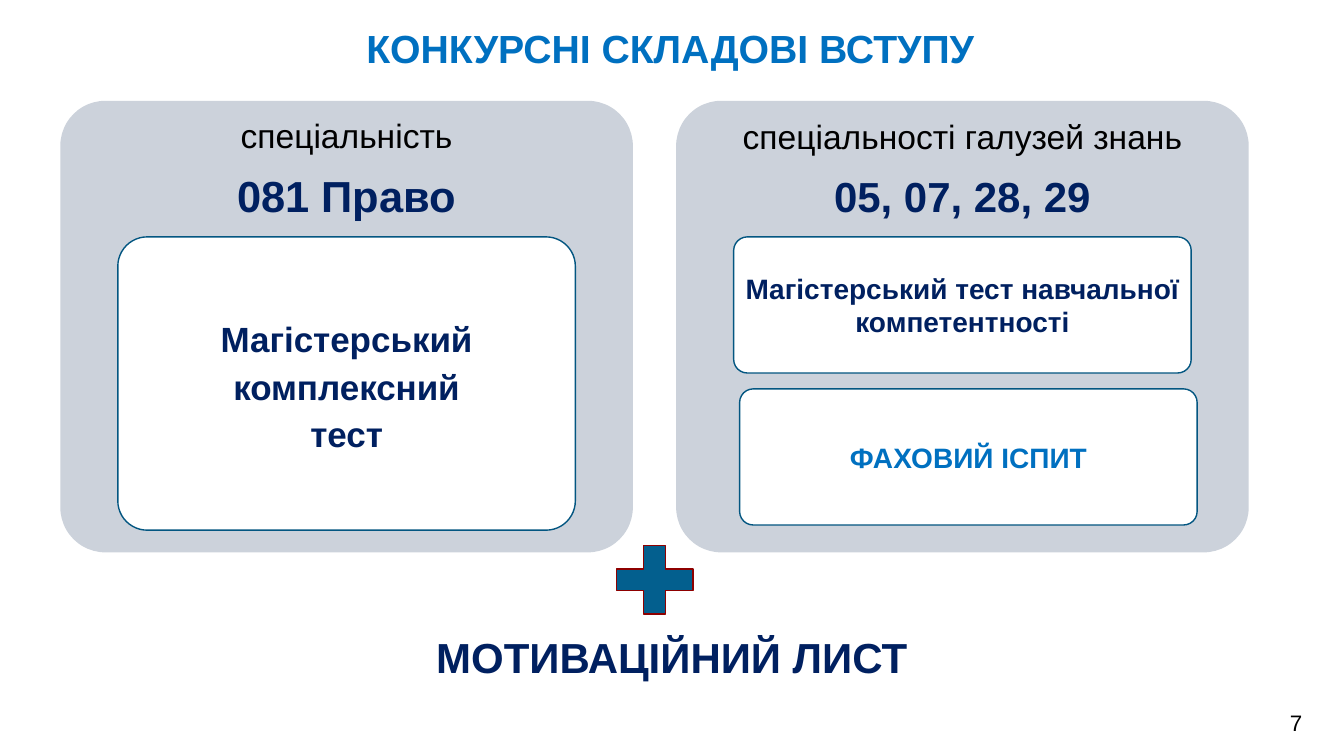
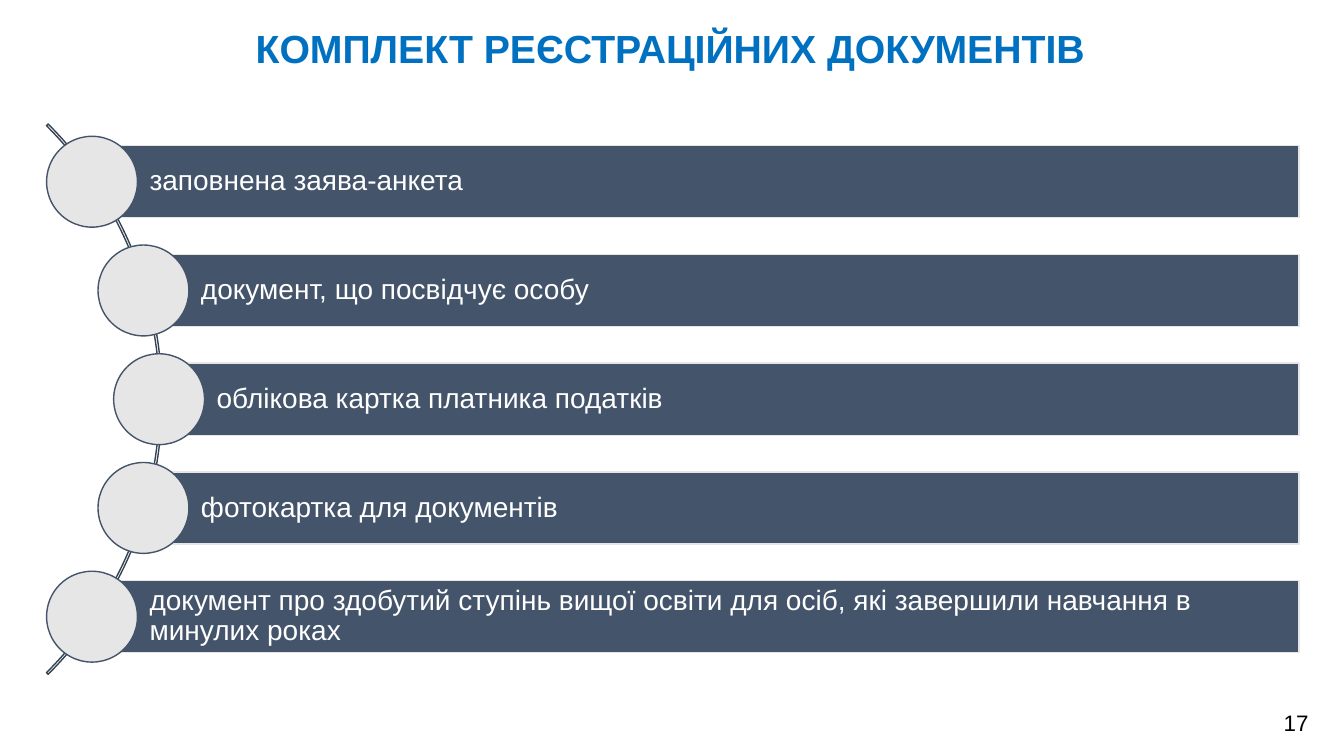
from math import sqrt
from pptx import Presentation
from pptx.dml.color import RGBColor
from pptx.enum.shapes import MSO_SHAPE
from pptx.enum.text import MSO_ANCHOR, PP_ALIGN
from pptx.util import Cm, Pt

WIDTH, HEIGHT = 33.87, 19.05
FONT = "Arial"
COLORS = {
    "black": "000000", "white": "FFFFFF", "title": "0070C0", "navy": "002060",
    "panel": "CCD2DB", "frame": "035681", "plus": "035F8E", "plus_line": "8E0000",
    "bar": "44546A", "pale": "E7E6E6", "arc": "364355",
}


def color(name):
    return RGBColor.from_string(COLORS[name])


class Deck:
    """Holds the shared style and the current slide."""

    def __init__(self):
        self.prs = Presentation()
        self.prs.slide_width, self.prs.slide_height = Cm(WIDTH), Cm(HEIGHT)
        self.s = None

    def slide(self, title, number):
        self.s = self.prs.slides.add_slide(self.prs.slide_layouts[6])
        self.text((0.48, 0.61, 32.82, 2.67), [(title, 28, "title", True)],
                  anchor=MSO_ANCHOR.TOP, spacing=0.9)
        self.text((31.85, 17.75, 1.63, 0.93), [(number, 16, "black", False)])

    def shape(self, kind, box, fill=None, line=None, adjust=()):
        sp = self.s.shapes.add_shape(kind, *map(Cm, box))
        sp.shadow.inherit = False
        for i, value in enumerate(adjust):
            sp.adjustments[i] = value
        if fill:
            sp.fill.solid()
            sp.fill.fore_color.rgb = color(fill)
        else:
            sp.fill.background()
        if line:
            sp.line.color.rgb = color(line)
            sp.line.width = Pt(1)
        else:
            sp.line.fill.background()
        return sp

    def rounded(self, box, fill, line=None):
        return self.shape(MSO_SHAPE.ROUNDED_RECTANGLE, box, fill, line, [0.1])

    def text(self, box, lines, **style):
        sp = self.s.shapes.add_textbox(*map(Cm, box))
        self.set_text(sp, lines, **style)

    def set_text(self, sp, lines, insets=(0.25, 0.13, 0.25, 0.13), align=PP_ALIGN.CENTER,
                 anchor=MSO_ANCHOR.MIDDLE, spacing=1.0, gap=0):
        """Fill a shape with (text, size, color, bold) paragraphs."""
        tf = sp.text_frame
        tf.word_wrap = True
        tf.vertical_anchor = anchor
        tf.margin_left, tf.margin_top, tf.margin_right, tf.margin_bottom = map(Cm, insets)
        tf.text = "\n".join(line[0] for line in lines)
        for p, (_, size, ink, bold) in zip(tf.paragraphs, lines):
            p.alignment = align
            p.line_spacing = spacing
            p.space_after = Pt(gap)
            for r in p.runs:
                r.font.name, r.font.size, r.font.bold = FONT, Pt(size), bold
                r.font.color.rgb = color(ink)

    def panel(self, left, caption, codes, size):
        self.rounded((left, 2.54, 14.43, 11.38), "panel")
        self.text((left, 2.54, 14.43, 3.4),
                  [(caption, 24, "black", False), (codes, size, "navy", True)], gap=10)

    def card(self, left, top, height, lines, spacing=1.0):
        sp = self.rounded((left, top, 11.53, height), "white", "frame")
        self.set_text(sp, lines, insets=(0.15, 0.1, 0.15, 0.1), spacing=spacing)

    def bar(self, x, y, label):
        """A labelled bar that starts at the centre (x, y) of its circle."""
        height, diameter, right = 1.82, 2.29, 32.74
        sp = self.shape(MSO_SHAPE.RECTANGLE, (x, y - height / 2, right - x, height),
                        "bar", "pale")
        self.set_text(sp, [(label, 20, "white", False)], insets=(1.45, 0.15, 0.15, 0.15),
                      align=PP_ALIGN.LEFT, spacing=0.9)
        self.shape(MSO_SHAPE.OVAL,
                   (x - diameter / 2, y - diameter / 2, diameter, diameter), "pale", "bar")


def admission(deck):
    deck.slide("КОНКУРСНІ СКЛАДОВІ ВСТУПУ", "7")
    # Left panel
    deck.panel(1.52, "спеціальність", "081 Право", 31)
    words = ("Магістерський", "комплексний", "тест")
    deck.card(2.97, 5.97, 7.39, [(word, 25, "navy", True) for word in words], 1.13)
    # Right panel
    deck.panel(17.04, "спеціальності галузей знань", "05, 07, 28, 29", 30)
    deck.card(18.49, 5.97, 3.43,
              [("Магістерський тест навчальної компетентності", 20, "navy", True)])
    deck.card(18.64, 9.8, 3.43, [("ФАХОВИЙ ІСПИТ", 20, "title", True)])
    # Common requirement
    deck.shape(MSO_SHAPE.MATH_PLUS, (15.19, 13.44, 2.62, 2.34), "plus", "plus_line")
    deck.text((0, 15.77, WIDTH, 1.55), [("МОТИВАЦІЙНИЙ ЛИСТ", 30, "navy", True)])


def documents(deck):
    deck.slide("КОМПЛЕКТ РЕЄСТРАЦІЙНИХ ДОКУМЕНТІВ", "17")
    # Arc behind the list
    cx, cy, diameter = -5.72, 10.06, 19.61
    deck.shape(MSO_SHAPE.BLOCK_ARC,
               (cx - diameter / 2, cy - diameter / 2, diameter, diameter),
               line="arc", adjust=(189, 27, 0.003))
    # Bars with circles that follow the arc
    labels = (
        "заповнена заява-анкета",
        "документ, що посвідчує особу",
        "облікова картка платника податків",
        "фотокартка для документів",
        "документ про здобутий ступінь вищої освіти для осіб, "
        "які завершили навчання в минулих роках",
    )
    radius, pitch = 9.73, 2.74
    for i, label in enumerate(labels):
        dy = (i - len(labels) // 2) * pitch
        deck.bar(cx + sqrt(radius ** 2 - dy ** 2), cy + dy, label)


def main():
    deck = Deck()
    admission(deck)
    documents(deck)
    deck.prs.save("out.pptx")


if __name__ == "__main__":
    main()
